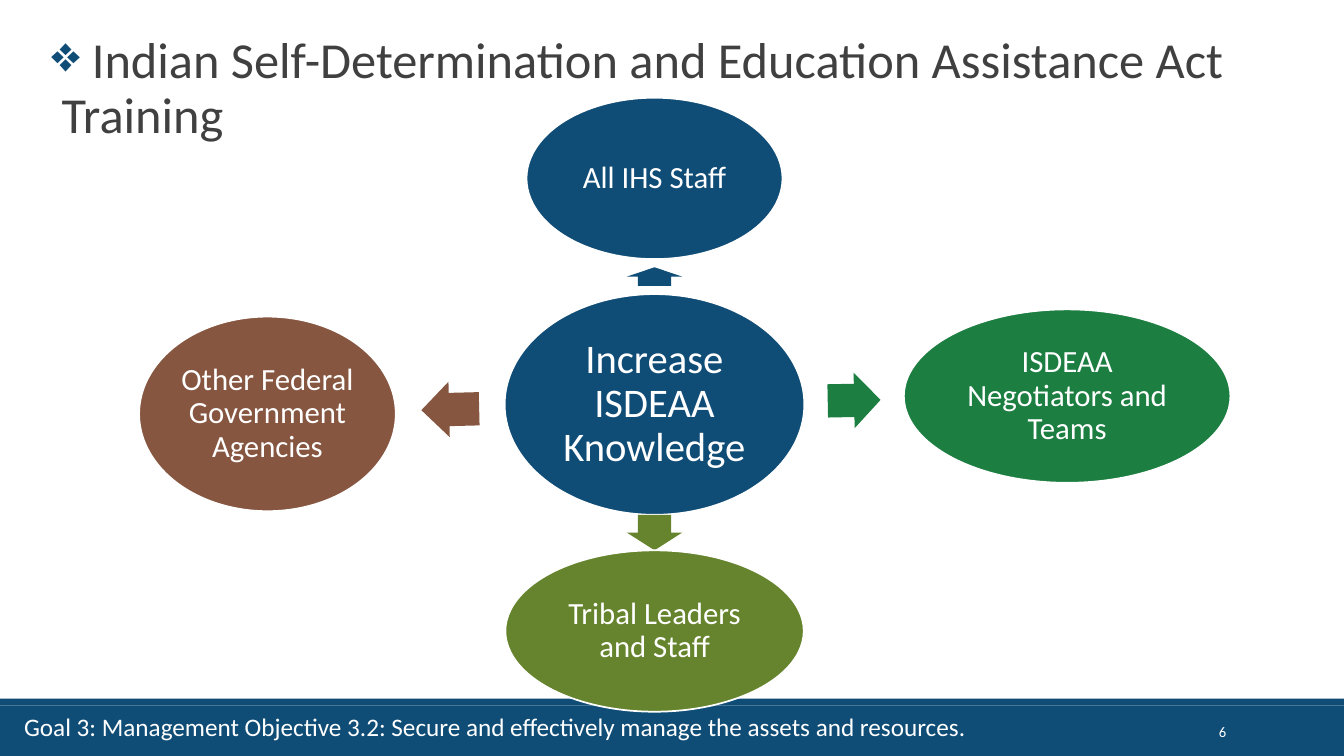
from math import atan2, cos, degrees, hypot, sin

from lxml import etree
from pptx import Presentation
from pptx.dml.color import RGBColor
from pptx.enum.shapes import MSO_SHAPE
from pptx.enum.text import MSO_ANCHOR, MSO_AUTO_SIZE, PP_ALIGN
from pptx.oxml.ns import qn
from pptx.util import Inches, Pt

RECT, OVAL, ARROW = MSO_SHAPE.RECTANGLE, MSO_SHAPE.OVAL, MSO_SHAPE.RIGHT_ARROW
TOP, MIDDLE = MSO_ANCHOR.TOP, MSO_ANCHOR.MIDDLE
LEFT, CENTER, RIGHT = PP_ALIGN.LEFT, PP_ALIGN.CENTER, PP_ALIGN.RIGHT

WIDE, HIGH = 13.33, 7.5
FONT = "Calibri"
COLORS = {"navy": "0F4C76", "green": "1C7E41", "olive": "66842D",
          "brown": "865640", "white": "FFFFFF", "gray": "404040"}

TITLE = " Indian Self-Determination and Education Assistance Act Training"
GOAL = ("Goal 3: Management Objective 3.2: Secure and effectively manage "
        "the assets and resources.")
PAGE = "6"

# Centre and size in percent of the slide
HUB = ("Increase ISDEAA Knowledge", (48.7, 53.5), (22.3, 29.2))
# The last figure is the share of the gap to the hub that the arrow fills
NODES = [
    ("All IHS Staff", (48.7, 23.6), (19.05, 21.35), "navy", 0.53),
    ("ISDEAA Negotiators and Teams", (79.4, 52.4), (24.3, 22.95), "green", 0.53),
    ("Tribal Leaders and Staff", (48.7, 83.47), (22.2, 21.35), "olive", 1),
    ("Other Federal Government Agencies", (19.9, 54.75), (19.1, 25.75), "brown", 0.53),
]
ARROW_SPAN = 0.55
# Left, top, width, height in percent of the slide
BARS = [(0, 93.33, 100, 6.67), (0, 92.4, 100, 0.93)]
TITLE_BOX = (3.08, 4, 95.95, 58.67)
GOAL_BOX = (1.05, 93.47, 96.62, 5.33)
PAGE_BOX = (81.25, 94.13, 10.73, 5.33)


def rgb(name):
    return RGBColor.from_string(COLORS[name])


def inch(pair):
    return pair[0] * WIDE / 100, pair[1] * HIGH / 100


def frame(box):
    return [Inches(n) for n in inch(box[:2]) + inch(box[2:])]


def write(item, text, size, align, color="white", anchor=MIDDLE, pad=None):
    body = item.text_frame
    body.word_wrap = True
    body.auto_size = MSO_AUTO_SIZE.NONE
    body.vertical_anchor = anchor
    if pad is not None:
        body.margin_left = body.margin_right = Inches(pad)
        body.margin_top = body.margin_bottom = Inches(pad)
    para = body.paragraphs[0]
    para.text = text
    para.alignment = align
    para.font.name = FONT
    para.font.size = Pt(size)
    para.font.color.rgb = rgb(color)
    return para


def draw(kind, box, color):
    item = slide.shapes.add_shape(kind, *box)
    item.shadow.inherit = False
    item.fill.solid()
    item.fill.fore_color.rgb = rgb(color)
    item.line.fill.background()
    return item


def oval(text, mid, size, color, points, pad):
    box = (mid[0] - size[0] / 2, mid[1] - size[1] / 2, *size)
    item = draw(OVAL, frame(box), color)
    item.line.color.rgb = rgb("white")
    item.line.width = Pt(1.25)
    write(item, text, points, CENTER, pad=pad).line_spacing = 0.9


def edge(size, angle):
    """Distance from an oval's centre to its rim, in inches."""
    wide, high = inch(size)
    return 0.5 / hypot(cos(angle) / wide, sin(angle) / high)


def link(mid, size, color, share):
    """Arrow centred in the gap between the hub and a node."""
    (x, y), (end_x, end_y) = inch(HUB[1]), inch(mid)
    angle = atan2(end_y - y, end_x - x)
    start = edge(HUB[2], angle)
    stop = hypot(end_x - x, end_y - y) - edge(size, angle)
    reach, long = (start + stop) / 2, (stop - start) * share
    left = x + reach * cos(angle) - long / 2
    top = y + reach * sin(angle) - ARROW_SPAN / 2
    item = draw(ARROW, [Inches(n) for n in (left, top, long, ARROW_SPAN)], color)
    item.rotation = degrees(angle) % 360
    item.adjustments[0] = 0.6
    item.adjustments[1] = 0.5


def bullet(para, char, color):
    props = para._p.get_or_add_pPr()
    props.set("marL", str(Inches(0.1)))
    props.set("indent", str(-Inches(0.1)))
    tint = etree.SubElement(props, qn("a:buClr"))
    etree.SubElement(tint, qn("a:srgbClr")).set("val", COLORS[color])
    etree.SubElement(props, qn("a:buChar")).set("char", char)


deck = Presentation()
deck.slide_width, deck.slide_height = Inches(WIDE), Inches(HIGH)
slide = deck.slides.add_slide(deck.slide_layouts[5])

for bar in BARS:
    draw(RECT, frame(bar), "navy")

head = slide.shapes.title
head.left, head.top, head.width, head.height = frame(TITLE_BOX)
para = write(head, TITLE, 36, LEFT, "gray", TOP)
bullet(para, "❖", "navy")
para.line_spacing = 0.9
para.space_before = Pt(0)

oval(*HUB, "navy", 29, 0.04)
for text, mid, size, color, share in NODES:
    link(mid, size, color, share)
    oval(text, mid, size, color, 22, 0.03)

write(slide.shapes.add_textbox(*frame(GOAL_BOX)), GOAL, 18, LEFT, anchor=TOP)
write(slide.shapes.add_textbox(*frame(PAGE_BOX)), PAGE, 10.5, RIGHT)

deck.save("out.pptx")
